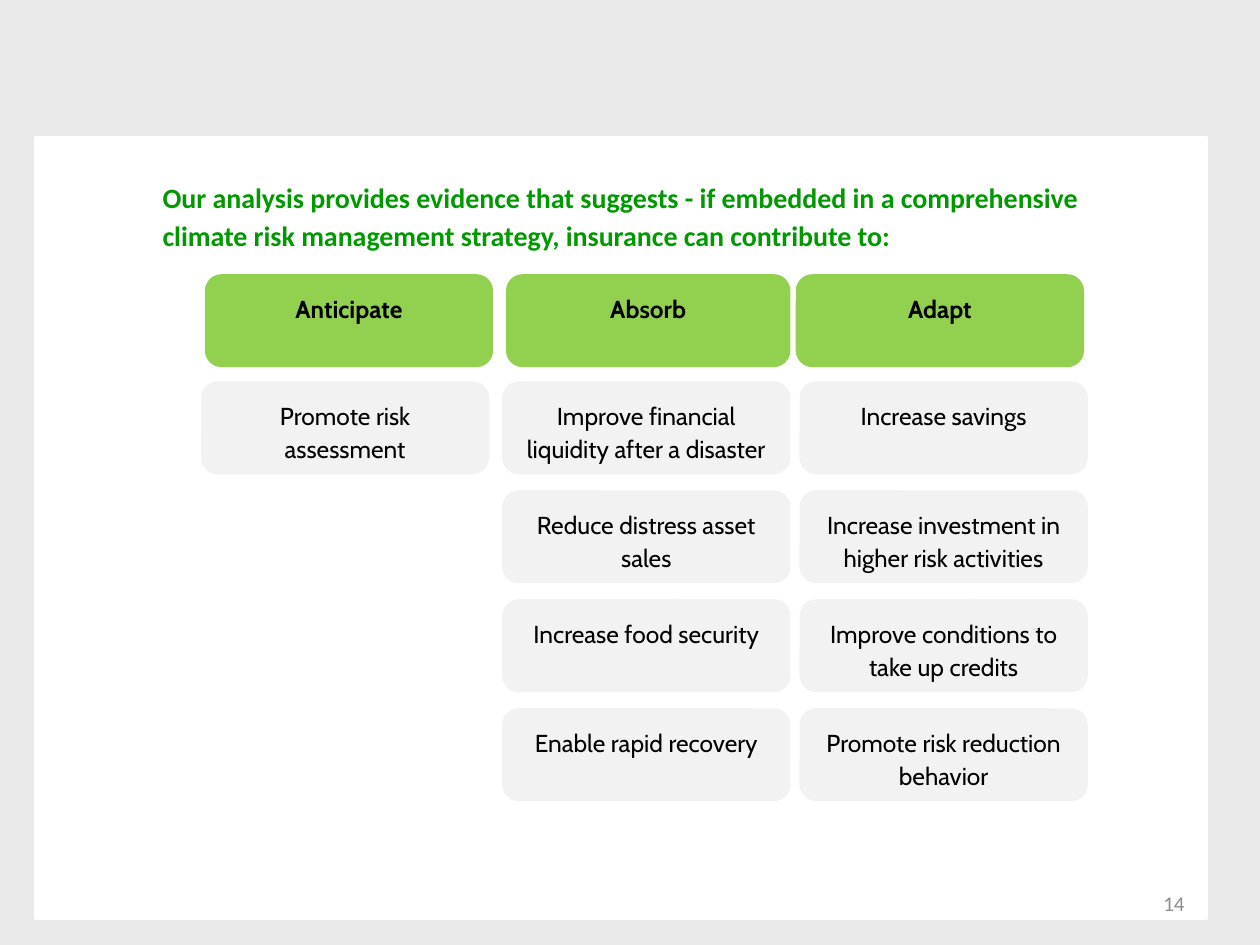
from dataclasses import dataclass
from pptx import Presentation
from pptx.dml.color import RGBColor
from pptx.enum.shapes import MSO_SHAPE
from pptx.enum.text import MSO_ANCHOR, PP_ALIGN
from pptx.util import Inches, Pt

RECT, ROUND = MSO_SHAPE.RECTANGLE, MSO_SHAPE.ROUNDED_RECTANGLE
TOP, MIDDLE = MSO_ANCHOR.TOP, MSO_ANCHOR.MIDDLE
LEFT, CENTER, RIGHT = PP_ALIGN.LEFT, PP_ALIGN.CENTER, PP_ALIGN.RIGHT
COLS, ROWS = 100, 75


@dataclass(frozen=True)
class Theme:
    back: str = "EAEAEA"
    panel: str = "FFFFFF"
    head: str = "92D050"
    card: str = "F2F2F2"
    title: str = "009A00"
    ink: str = "000000"
    muted: str = "8C8C8C"
    sans: str = "Calibri"
    body: str = "Cabin"
    large: int = 16
    normal: int = 14
    small: int = 12
    line: int = 2
    lead: float = 1.15


class Page:
    """Draws styled elements on one slide, placed on a 100 by 75 grid."""

    def __init__(self, deck, theme):
        self.deck, self.theme = deck, theme
        self.slide = deck.slides.add_slide(deck.slide_layouts[5])
        fill = self.slide.background.fill
        fill.solid()
        fill.fore_color.rgb = RGBColor.from_string(theme.back)

    def place(self, col, row, wide, high):
        x, y = self.deck.slide_width / COLS, self.deck.slide_height / ROWS
        return [round(v) for v in (col * x, row * y, wide * x, high * y)]

    def label(self, shape, text, size, font, color, align, anchor, bold=False):
        frame = shape.text_frame
        frame.word_wrap = True
        frame.vertical_anchor = anchor
        frame.text = text
        para = frame.paragraphs[0]
        para.alignment = align
        para.line_spacing = self.theme.lead
        face = para.runs[0].font
        face.size, face.name, face.bold = Pt(size), font, bold
        face.color.rgb = RGBColor.from_string(color)

    def block(self, kind, place, color):
        shape = self.slide.shapes.add_shape(kind, *self.place(*place))
        shape.shadow.inherit = False
        shape.fill.solid()
        shape.fill.fore_color.rgb = RGBColor.from_string(color)
        shape.line.color.rgb = RGBColor.from_string(color)
        shape.line.width = Pt(self.theme.line)
        return shape

    def panel(self, *place):
        self.block(RECT, place, self.theme.panel)

    def title(self, text, *place):
        t, shape = self.theme, self.slide.shapes.title
        shape.left, shape.top, shape.width, shape.height = self.place(*place)
        tree = shape.element.getparent()
        tree.append(shape.element)
        self.label(shape, text, t.large, t.sans, t.title, LEFT, TOP, True)

    def card(self, text, *place, head=False):
        t = self.theme
        shape = self.block(ROUND, place, t.head if head else t.card)
        shape.text_frame.margin_top = Inches(0.07)
        shape.text_frame.margin_bottom = 0
        self.label(shape, text, t.normal, t.body, t.ink, CENTER, TOP, head)

    def number(self, text, *place):
        t = self.theme
        box = self.slide.shapes.add_textbox(*self.place(*place))
        self.label(box, text, t.small, t.sans, t.muted, RIGHT, MIDDLE)


HEADS = [("Anticipate", 16.4, 22.6), ("Absorb", 40.3, 22.3), ("Adapt", 63.3, 22.6)]
CARDS = [
    (16.1, ["Promote risk assessment"]),
    (40, ["Improve financial liquidity after a disaster", "Reduce distress asset sales",
          "Increase food security", "Enable rapid recovery"]),
    (63.6, ["Increase savings", "Increase investment in higher risk activities",
            "Improve conditions to take up credits", "Promote risk reduction behavior"]),
]
HIGH, WIDE, FIRST, STEP = 7.1, 22.6, 30.4, 8.65


def main():
    deck = Presentation()
    deck.slide_width, deck.slide_height = Inches(10), Inches(7.5)
    page = Page(deck, Theme())
    page.panel(2.8, 10.9, 92.9, 62)
    page.number("14", 71.7, 69.5, 23.3, 4)
    page.title("Our analysis provides evidence that suggests - if embedded in a comprehensive "
               "climate risk management strategy, insurance can contribute to:",
               11.9, 13.4, 76.2, 6.5)
    for text, col, wide in HEADS:
        page.card(text, col, 21.9, wide, HIGH, head=True)
    for col, texts in CARDS:
        for i, text in enumerate(texts):
            page.card(text, col, FIRST + i * STEP, WIDE, HIGH)
    deck.save("out.pptx")


if __name__ == "__main__":
    main()
